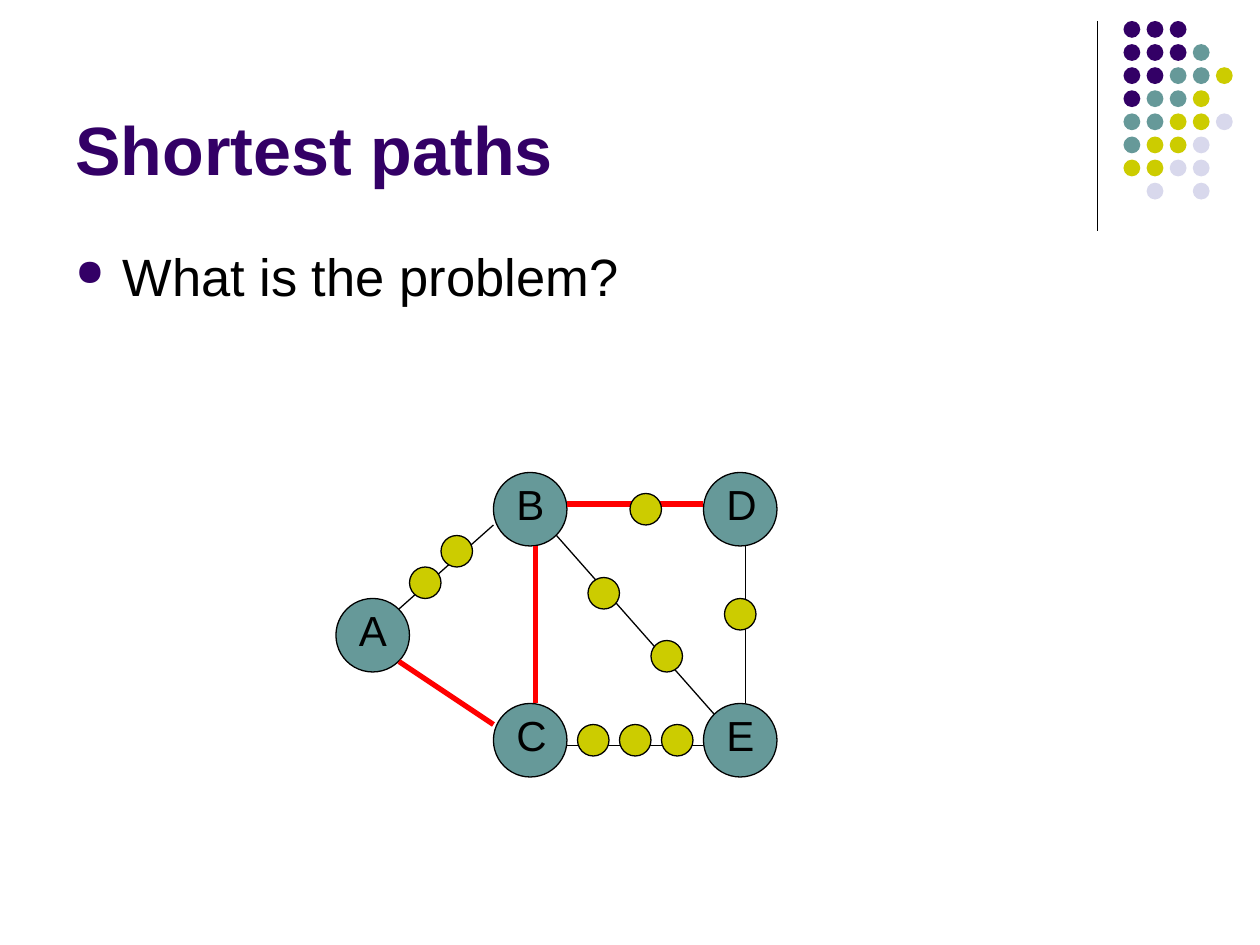
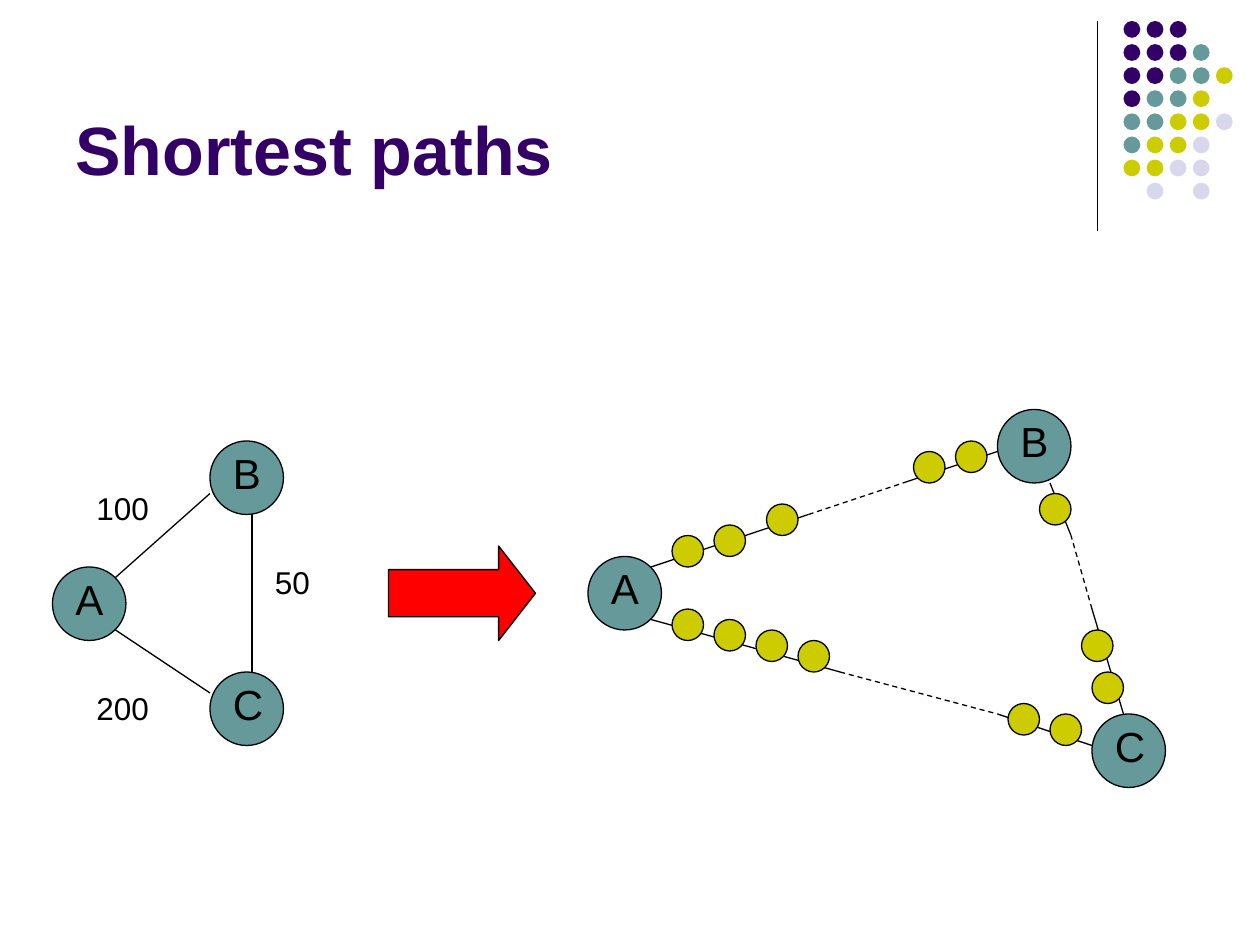
import pptx
import pptx.dml.color
import pptx.enum.dml
import pptx.enum.shapes
import pptx.enum.text
import pptx.oxml.xmlchemy
import pptx.util
from lxml import etree
from pptx.oxml.ns import qn

PX = 914400 // 120  # 120 px to the inch
FONT = "Arial"
BLACK, RED = "000000", "FF0000"
PURPLE, TEAL, YELLOW, LILAC = "330066", "669999", "CCCC00", "D8D8EC"
NODE_SIZE, STOP_SIZE = 70, 30
SHAPES = pptx.enum.shapes.MSO_SHAPE

# Corner ornament: one letter per dot, a space for a gap
DOT_ROWS = ["PPP", "PPPT", "PPTTY", "PTTY", "TTYYL", "TYYL", "YYLL", " L L"]
DOT_COLORS = {"P": PURPLE, "T": TEAL, "Y": YELLOW, "L": LILAC}
DOT_LEFT, DOT_TOP, DOT_PITCH, DOT_SIZE = 1070, 20, 22, 16


def px(*lengths):
    return [pptx.util.Emu(length * PX) for length in lengths]


def rgb(color):
    return pptx.dml.color.RGBColor.from_string(color)


def add_filled(shapes, kind, bounds, fill, outlined=True):
    shape = shapes.add_shape(kind, *px(*bounds))
    shape.shadow.inherit = False
    shape.fill.solid()
    shape.fill.fore_color.rgb = rgb(fill)
    if outlined:
        shape.line.color.rgb = rgb(BLACK)
        shape.line.width = pptx.util.Pt(0.75)
    else:
        shape.line.fill.background()
    return shape


def add_text(shapes, bounds, text, size, color=BLACK, bold=False, before=2):
    box = shapes.add_textbox(*px(*bounds))
    box.text_frame.word_wrap = True
    para = box.text_frame.paragraphs[0]
    para.space_before = pptx.util.Pt(before)
    span = para.add_run()
    span.text = text
    span.font.name = FONT
    span.font.size = pptx.util.Pt(size)
    span.font.bold = bold
    span.font.color.rgb = rgb(color)
    return box


def add_line(page, start, end, color=BLACK, width=0.75, dashed=False):
    line = page.shapes.add_connector(
        pptx.enum.shapes.MSO_CONNECTOR.STRAIGHT, *px(*start, *end))
    line.line.color.rgb = rgb(color)
    line.line.width = pptx.util.Pt(width)
    if dashed:
        line.line.dash_style = pptx.enum.dml.MSO_LINE.DASH
    etree.SubElement(line._element.spPr, qn("a:effectLst"))


def add_bullet(page, bounds, text):
    box = add_text(page.shapes, bounds, text, 30, before=3)
    properties = box.text_frame.paragraphs[0]._p.get_or_add_pPr()
    indent = 45 * PX
    properties.set("marL", str(indent))
    properties.set("indent", str(-indent))
    color = etree.SubElement(properties, qn("a:buClr"))
    etree.SubElement(color, qn("a:srgbClr"), val=PURPLE)
    etree.SubElement(properties, qn("a:buSzPct"), val="70000")
    etree.SubElement(properties, qn("a:buChar"), char="●")


def add_node(page, letter, left, top):
    group = page.shapes.add_group_shape()
    add_filled(group.shapes, SHAPES.OVAL, (left, top, NODE_SIZE, NODE_SIZE), TEAL)
    add_text(group.shapes, (left + 10, top, 60, 60), letter, 24)


def add_graph(page, nodes, edges, stops, red_edges=(), dashed_edges=()):
    for letter, left, top in nodes:
        add_node(page, letter, left, top)
    for start, end in edges:
        add_line(page, start, end)
    for start, end in red_edges:
        add_line(page, start, end, RED, 3)
    for start, end in dashed_edges:
        add_line(page, start, end, dashed=True)
    for left, top in stops:
        add_filled(page.shapes, SHAPES.OVAL, (left, top, STOP_SIZE, STOP_SIZE), YELLOW)


def add_page(deck, title):
    page = deck.slides.add_slide(deck.slide_layouts[6])
    # Corner ornament
    add_line(page, (1045, 20), (1045, 220))
    dots = page.shapes.add_group_shape()
    for row, letters in enumerate(DOT_ROWS):
        for column, letter in enumerate(letters):
            if letter in DOT_COLORS:
                bounds = (DOT_LEFT + column * DOT_PITCH, DOT_TOP + row * DOT_PITCH,
                          DOT_SIZE, DOT_SIZE)
                add_filled(dots.shapes, SHAPES.OVAL, bounds, DOT_COLORS[letter], False)
    # Title
    box = add_text(page.shapes, (60, 16, 990, 170), title, 39, PURPLE, True, 0)
    box.text_frame.vertical_anchor = pptx.enum.text.MSO_ANCHOR.BOTTOM
    return page


def build_problem(deck):
    page = add_page(deck, "Shortest paths")
    add_bullet(page, (60, 226, 1080, 104), "What is the problem?")
    add_graph(
        page,
        nodes=[("A", 320, 570), ("B", 470, 450), ("C", 470, 670),
               ("E", 670, 670), ("D", 670, 450)],
        edges=[((380, 580), (470, 500)), ((540, 710), (670, 710)),
               ((710, 670), (710, 520)), ((530, 510), (680, 680))],
        red_edges=[((380, 630), (470, 690)), ((510, 670), (510, 520)),
                   ((540, 480), (670, 480))],
        stops=[(420, 510), (390, 540), (560, 550), (620, 610), (690, 570),
               (600, 470), (550, 690), (590, 690), (630, 690)])


def build_expansion(deck):
    page = add_page(deck, "Shortest paths")
    # Weighted graph
    add_graph(
        page,
        nodes=[("A", 50, 540), ("B", 200, 420), ("C", 200, 640)],
        edges=[((110, 550), (200, 470)), ((110, 600), (200, 660)),
               ((240, 640), (240, 490))],
        stops=[])
    for weight, left, top, width in [("200", 80, 650, 140), ("50", 250, 530, 70),
                                     ("100", 80, 460, 100)]:
        add_text(page.shapes, (left, top, width, 48), weight, 18)
    # Arrow between the graphs
    arrow = add_filled(page.shapes, SHAPES.RIGHT_ARROW, (370, 520, 140, 90), RED)
    arrow.adjustments[1] = 0.39
    # Graph with each weight turned into unit steps
    add_graph(
        page,
        nodes=[("A", 560, 530), ("B", 950, 390), ("C", 1040, 680)],
        edges=[((620, 540), (770, 490)), ((860, 460), (950, 430)),
               ((620, 590), (800, 640)), ((950, 680), (1040, 710)),
               ((1020, 510), (1000, 460)), ((1040, 580), (1070, 680))],
        dashed_edges=[((770, 490), (860, 460)), ((800, 640), (950, 680)),
                      ((1040, 580), (1020, 510))],
        stops=[(640, 510), (680, 500), (730, 480), (870, 430), (910, 420),
               (640, 580), (680, 590), (720, 600), (760, 610), (960, 670),
               (1000, 680), (1040, 640), (1030, 600), (990, 470)])


def main():
    deck = pptx.Presentation()
    deck.slide_width, deck.slide_height = px(1200, 900)
    build_problem(deck)
    build_expansion(deck)
    deck.save("out.pptx")


if __name__ == "__main__":
    main()
